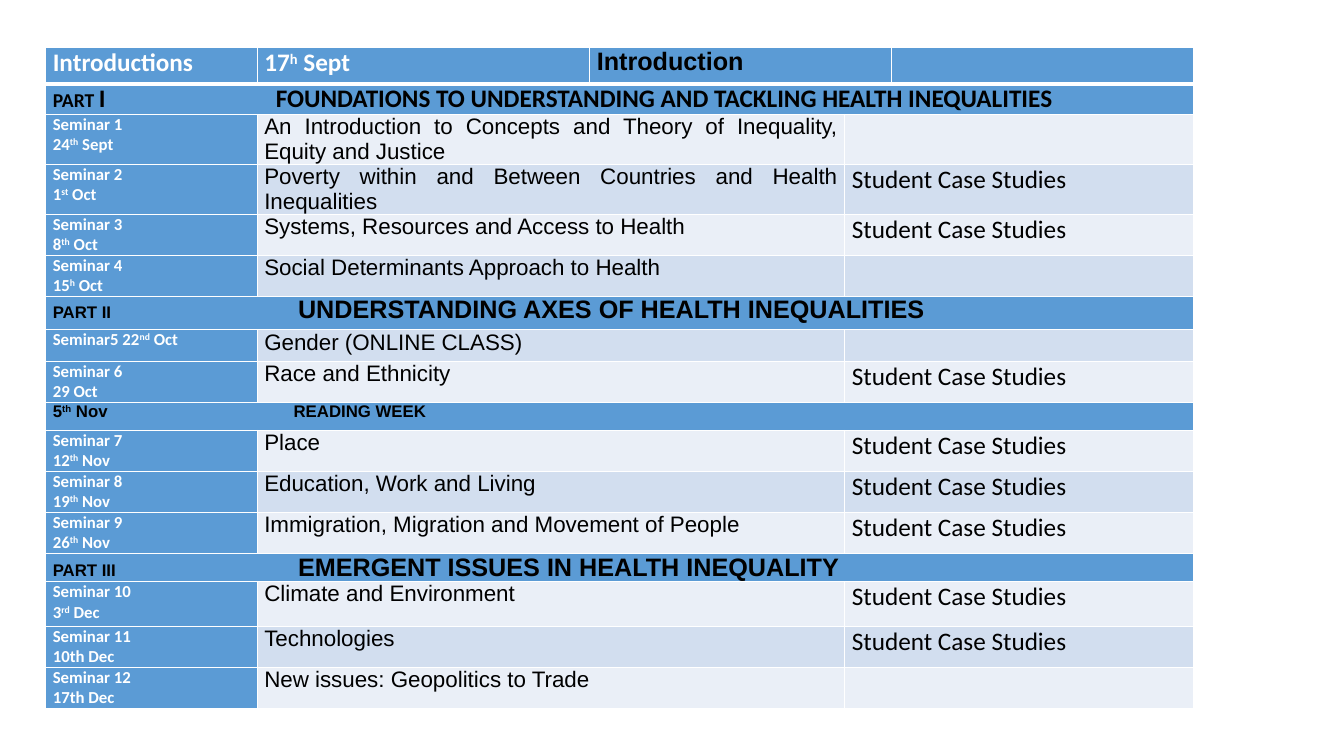
from lxml.etree import SubElement
from pptx import Presentation
from pptx.dml.color import RGBColor
from pptx.enum.text import PP_ALIGN as Align
from pptx.oxml.ns import qn
from pptx.util import Cm, Pt

BLUE, PALE, MIDDLE = "5B9BD5", "EAEFF7", "D2DEEF"
WHITE, BLACK = "FFFFFF", "000000"
COLUMN_WIDTHS = (5.33, 8.38, 6.43, 1.17, 7.62)
HEADER_HEIGHT = 0.91
CASES = "Student Case Studies"

# Sections: height, [(label, size)], title, title size, font, tab position
# Seminars: height, label lines, topic, activity; ^ marks raised letters
SCHEDULE = [
    (0.77, [("PART ", 14), ("I", 18)],
     "FOUNDATIONS TO UNDERSTANDING AND TACKLING HEALTH INEQUALITIES", 18, "Calibri", 5.62),
    (1.25, ["Seminar 1", "24^th^ Sept"],
     "An Introduction to Concepts and Theory of Inequality, Equity and Justice", ""),
    (1.25, ["Seminar 2", "1^st^ Oct"],
     "Poverty within and Between Countries and Health Inequalities", CASES),
    (1.03, ["Seminar 3", "8^th^ Oct"], "Systems, Resources and Access to Health", CASES),
    (1.03, ["Seminar 4", "15^h^ Oct"], "Social Determinants Approach to Health", ""),
    (0.85, [("PART II", 12)], "UNDERSTANDING AXES OF HEALTH INEQUALITIES", 18, "Arial", 6.18),
    (0.79, ["Seminar5 22^nd^ Oct"], "Gender (ONLINE CLASS)", ""),
    (1.03, ["Seminar 6", "29 Oct"], "Race and Ethnicity", CASES),
    (0.71, [("5^th^ Nov", 12)], "READING WEEK", 12, "Arial", 6.07),
    (1.03, ["Seminar 7", "12^th^ Nov"], "Place", CASES),
    (1.03, ["Seminar 8", "19^th^ Nov"], "Education, Work and Living", CASES),
    (1.03, ["Seminar 9", "26^th^ Nov"], "Immigration, Migration and Movement of People", CASES),
    (0.71, [("PART III", 12)], "EMERGENT ISSUES IN HEALTH INEQUALITY", 18, "Arial", 6.18),
    (1.13, ["Seminar 10", "3^rd^ Dec"], "Climate and Environment", CASES),
    (1.03, ["Seminar 11", "10th Dec"], "Technologies", CASES),
    (1.03, ["Seminar 12", "17th Dec"], "New issues: Geopolitics to Trade", ""),
]


def rgb(value):
    return RGBColor.from_string(value)


def style_cell(cell, fill, bottom_width=1):
    """Set margins, white borders and fill."""
    cell.margin_left = cell.margin_right = Cm(0.18)
    cell.margin_top = cell.margin_bottom = 0
    properties = cell._tc.get_or_add_tcPr()
    for side in "LRTB":
        width = bottom_width if side == "B" else 1
        line = SubElement(properties, qn(f"a:ln{side}"), w=str(Pt(width)))
        SubElement(SubElement(line, qn("a:solidFill")), qn("a:srgbClr"), val=WHITE)
    cell.fill.solid()
    cell.fill.fore_color.rgb = rgb(fill)


def add_runs(paragraph, text, size, font="Calibri", color=BLACK, bold=False):
    """Add text, raising every part that stands between two ^ marks."""
    for index, part in enumerate(text.split("^")):
        if not part:
            continue
        run = paragraph.add_run()
        run.text = part
        run.font.size = Pt(size)
        run.font.name = font
        run.font.bold = bold
        run.font.color.rgb = rgb(color)
        if index % 2:
            run._r.get_or_add_rPr().set("baseline", "30000")


def write_lines(cell, lines, *style, align=Align.JUSTIFY):
    frame = cell.text_frame
    for index, line in enumerate(lines):
        paragraph = frame.add_paragraph() if index else frame.paragraphs[0]
        paragraph.alignment = align
        add_runs(paragraph, line, *style)


def fill_header(cells):
    cells[2].merge(cells[3])
    for cell in cells:
        style_cell(cell, BLUE, bottom_width=3)
    write_lines(cells[0], ["Introductions"], 18, "Calibri", WHITE, True)
    write_lines(cells[1], ["17^h^ Sept"], 18, "Calibri", WHITE, True)
    write_lines(cells[2], ["Introduction"], 18, "Arial", BLACK, True)


def fill_section(cells, labels, title, size, font, tab):
    cells[0].merge(cells[-1])
    for cell in cells:
        style_cell(cell, BLUE)
    paragraph = cells[0].text_frame.paragraphs[0]
    tabs = SubElement(paragraph._p.get_or_add_pPr(), qn("a:tabLst"))
    SubElement(tabs, qn("a:tab"), pos=str(Cm(tab)), algn="l")
    for label, label_size in labels:
        add_runs(paragraph, label, label_size, font, BLACK, True)
    add_runs(paragraph, "\t" + title, size, font, BLACK, True)


def fill_seminar(cells, band, label_lines, topic, activity):
    cells[1].merge(cells[2])
    cells[3].merge(cells[4])
    for index, cell in enumerate(cells):
        style_cell(cell, band if index else BLUE)
    write_lines(cells[0], label_lines, 12, "Calibri", WHITE, True)
    write_lines(cells[1], [topic], 16, "Arial")
    if activity:
        write_lines(cells[3], [activity], 18, align=Align.LEFT)


def add_schedule(slide, left, top):
    heights = [HEADER_HEIGHT] + [entry[0] for entry in SCHEDULE]
    table = slide.shapes.add_table(
        len(heights), len(COLUMN_WIDTHS), Cm(left), Cm(top),
        Cm(sum(COLUMN_WIDTHS)), Cm(sum(heights))).table
    table.first_row = table.horz_banding = False
    for column, width in zip(table.columns, COLUMN_WIDTHS):
        column.width = Cm(width)
    for row, height in zip(table.rows, heights):
        row.height = Cm(height)

    rows = [list(row.cells) for row in table.rows]
    fill_header(rows[0])
    for number, (_, *entry) in enumerate(SCHEDULE, start=1):
        if len(entry) == 5:
            fill_section(rows[number], *entry)
        else:
            fill_seminar(rows[number], MIDDLE if number % 2 else PALE, *entry)


def main():
    presentation = Presentation()
    presentation.slide_width, presentation.slide_height = Cm(33.87), Cm(19.05)
    slide = presentation.slides.add_slide(presentation.slide_layouts[6])
    add_schedule(slide, 1.15, 1.2)
    presentation.save("out.pptx")


if __name__ == "__main__":
    main()
